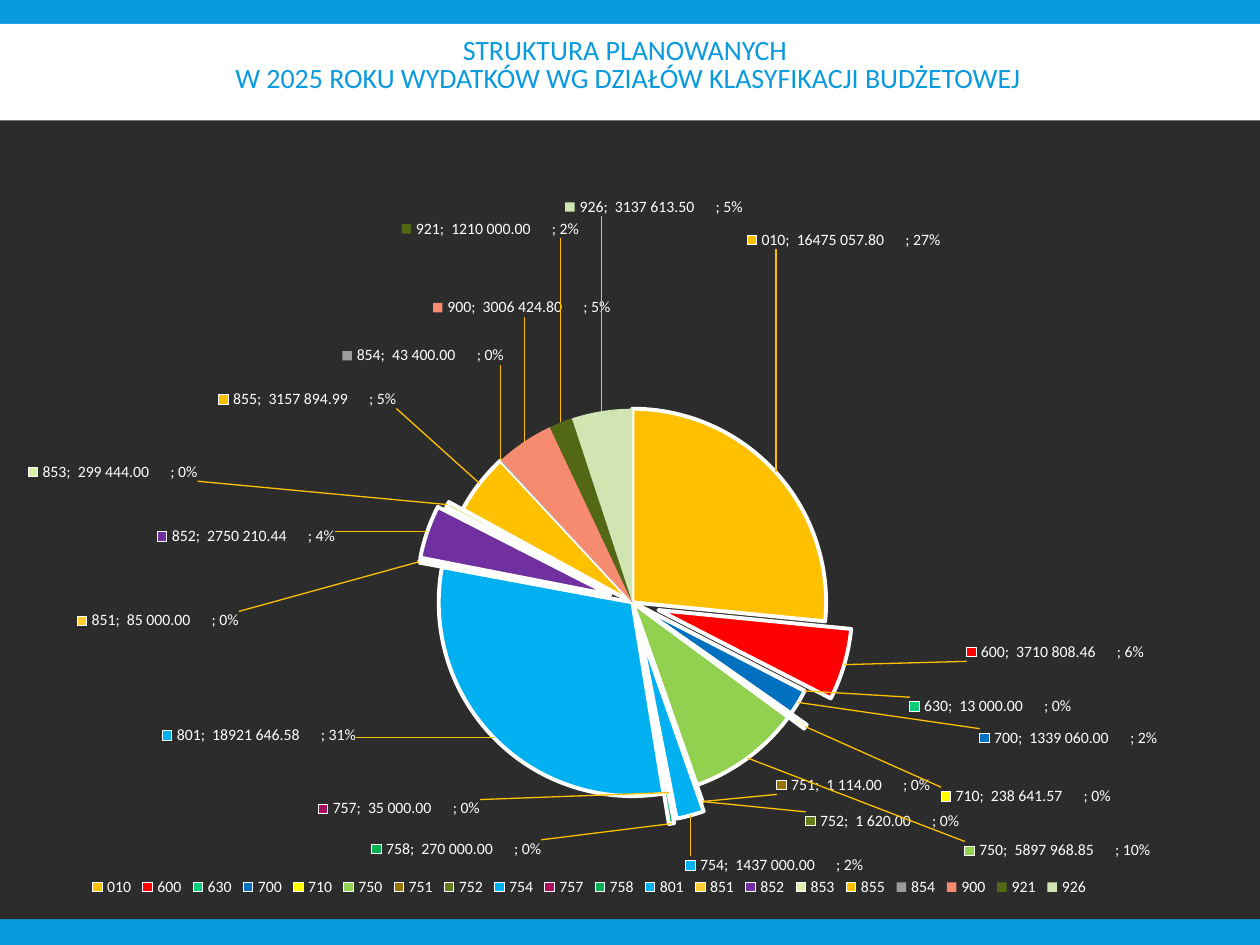
"""Build the slide on planned 2025 spending by budget division."""
from math import cos, radians, sin

from pptx import Presentation
from pptx.chart.data import CategoryChartData
from pptx.dml.color import RGBColor
from pptx.enum.chart import XL_CHART_TYPE, XL_LEGEND_POSITION
from pptx.enum.shapes import MSO_SHAPE
from pptx.enum.text import MSO_ANCHOR, PP_ALIGN
from pptx.oxml import parse_xml
from pptx.oxml.ns import nsdecls, qn
from pptx.util import Pt


def paint(fill, color):
    fill.solid()
    fill.fore_color.rgb = RGBColor.from_string(color)


def chart_xml(tag, body):
    return parse_xml(f'<c:{tag} {nsdecls("c", "a")}>{body}</c:{tag}>')


# division, amount, colour, explosion %, label left, label right, label middle
divisions = [
    ("010", 16475057.8, "FFC000", 0, 427, 537, 137),
    ("600", 3710808.46, "FF0000", 14, 552.5, 654, 373),
    ("630", 13000, "08CC78", 0, 520, 612, 404),
    ("700", 1339060, "0070C0", 0, 560, 661, 422),
    ("710", 238641.57, "FFFF00", 10, 538, 635.5, 455.5),
    ("750", 5897968.85, "92D050", 0, 551.5, 657, 486.5),
    ("751", 1114, "997300", 9, 444, 532, 449),
    ("752", 1620, "637D18", 9, 460.5, 548.5, 469.5),
    ("754", 1437000, "00B0F0", 14, 392, 493, 495),
    ("757", 35000, "AC0C5C", 0, 182, 275, 462.5),
    ("758", 270000, "00B050", 16, 212.5, 309, 485.5),
    ("801", 18921646.58, "00B0F0", 0, 92.5, 203.5, 420.5),
    ("851", 85000, "FFCD33", 12, 44, 136.5, 354.5),
    ("852", 2750210.44, "7030A0", 12, 89.5, 191.5, 306.5),
    ("853", 299444, "DCEEA7", 8, 16, 113, 269.5),
    ("855", 3157894.99, "FFC000", 0, 124.5, 226.5, 228),
    ("854", 43400, "9B9B9B", 0, 196, 288, 203),
    ("900", 3006424.8, "F68B6F", 0, 248, 349, 175.5),
    ("921", 1210000, "526814", 0, 229.5, 331, 130.5),
    ("926", 3137613.5, "D1E5B3", 0, 323.5, 424.5, 118),
]
outlined_divisions = 16
amount_format = r"_-* #\ ##0.00\ _z_ł_-;\-* #\ ##0.00\ _z_ł_-"

presentation = Presentation()
presentation.slide_width, presentation.slide_height = Pt(720), Pt(540)
slide = presentation.slides.add_slide(presentation.slide_layouts[6])
paint(slide.background.fill, "099BDD")

title_band = slide.shapes.add_shape(MSO_SHAPE.RECTANGLE, 0, Pt(13.7), Pt(720), Pt(129.6))
title_band.shadow.inherit = False
paint(title_band.fill, "FFFFFF")
title_band.line.fill.background()

title = slide.shapes.add_textbox(Pt(36.7), Pt(15.1), Pt(644.4), Pt(45.4)).text_frame
title.word_wrap = True
title.vertical_anchor = MSO_ANCHOR.MIDDLE
heading = title.paragraphs[0]
heading.text = "STRUKTURA PLANOWANYCH \vW 2025 ROKU WYDATKÓW WG DZIAŁÓW KLASYFIKACJI BUDŻETOWEJ"
heading.alignment = PP_ALIGN.CENTER
heading.line_spacing = 0.85
heading.font.size = Pt(16)
heading.font.name = "Calibri"
heading.font.color.rgb = RGBColor.from_string("099BDD")

spending = CategoryChartData(number_format=amount_format)
spending.categories = [division[0] for division in divisions]
spending.add_series("Series 1", [division[1] for division in divisions])
chart_left, chart_top, chart_width, chart_height = -5.4, 68.8, 728.6, 456.5
chart = slide.shapes.add_chart(
    XL_CHART_TYPE.PIE, Pt(chart_left), Pt(chart_top), Pt(chart_width), Pt(chart_height), spending
).chart
chart.has_title = False
chart.has_legend = True
chart.legend.position = XL_LEGEND_POSITION.BOTTOM
chart.legend.include_in_layout = False
for font, size in ((chart.font, 10), (chart.legend.font, 9)):
    font.size = Pt(size)
    font.name = "Calibri"
    font.color.rgb = RGBColor.from_string("FFFFFF")
chart.element.find(qn("c:txPr")).addprevious(chart_xml(
    "spPr", '<a:solidFill><a:srgbClr val="2C2C2C"/></a:solidFill><a:ln><a:noFill/></a:ln>'))

plot_x, plot_y, plot_w, plot_h = 0.157, 0.361, 0.693, 0.485
plot_area = chart.element.find(".//" + qn("c:plotArea"))
legend = chart.element.find(".//" + qn("c:legend"))
for part, position, target, bounds in (
    (plot_area, 0, '<c:layoutTarget val="inner"/>', (plot_x, plot_y, plot_w, plot_h)),
    (legend, 1, "", (0.075, 0.94, 0.79, 0.04)),
):
    for layout in part.findall(qn("c:layout")):
        part.remove(layout)
    edges = "".join(f'<c:{side} val="{value}"/>' for side, value in zip("xywh", bounds))
    part.insert(position, chart_xml("layout", (
        f'<c:manualLayout>{target}<c:xMode val="edge"/><c:yMode val="edge"/>'
        f'{edges}</c:manualLayout>')))

label_style = (
    '<c:spPr><a:noFill/><a:ln><a:noFill/></a:ln></c:spPr>'
    '<c:txPr><a:bodyPr wrap="none"/><a:p><a:pPr><a:defRPr sz="900">'
    '<a:solidFill><a:srgbClr val="FFFFFF"/></a:solidFill><a:latin typeface="Calibri"/>'
    '</a:defRPr></a:pPr><a:endParaRPr lang="pl-PL"/></a:p></c:txPr>'
    '<c:dLblPos val="bestFit"/><c:showLegendKey val="1"/><c:showVal val="1"/>'
    '<c:showCatName val="1"/><c:showSerName val="0"/><c:showPercent val="1"/>'
    '<c:showBubbleSize val="0"/><c:separator>; </c:separator>')

# Label offsets count from the outer edge of each slice, at its middle angle.
center_x = chart_left + (plot_x + plot_w / 2) * chart_width
center_y = chart_top + (plot_y + plot_h / 2) * chart_height
radius = plot_h * chart_height / 2
edge_gap, label_height = 4.25, 11
total = sum(division[1] for division in divisions)
running, labels = 0, ""
series = chart.plots[0].series[0]
for index, (_, amount, color, explosion, left, right, middle) in enumerate(divisions):
    slice_format = series.points[index].format
    paint(slice_format.fill, color)
    if index < outlined_divisions:
        paint(slice_format.line.fill, "FFFFFF")
        slice_format.line.width = Pt(2.25)
    else:
        slice_format.line.fill.background()
    if explosion:
        slice_shape = chart.element.findall(".//" + qn("c:dPt"))[index].find(qn("c:spPr"))
        slice_shape.addprevious(parse_xml(f'<c:explosion {nsdecls("c")} val="{explosion}"/>'))

    angle = radians(360 * (running + amount / 2) / total)
    running += amount
    reach = radius * (1 + explosion / 100) + edge_gap
    across, down = sin(angle), -cos(angle)
    near_axis = sin(radians(5))
    shift_x = 0.5 if abs(across) < near_axis else float(across < 0)
    shift_y = 0.5 if abs(down) < near_axis else float(down < 0)
    usual_left = center_x + reach * across - shift_x * (right - left)
    usual_top = center_y + reach * down - shift_y * label_height
    offset_x = (left - usual_left) / chart_width
    offset_y = (middle - label_height / 2 - usual_top) / chart_height
    labels += (
        f'<c:dLbl><c:idx val="{index}"/><c:layout><c:manualLayout><c:x val="{offset_x:.4f}"/>'
        f'<c:y val="{offset_y:.4f}"/></c:manualLayout></c:layout>{label_style}</c:dLbl>')

leader_lines = (
    '<c:showLeaderLines val="1"/><c:leaderLines><c:spPr><a:ln w="9525"><a:solidFill>'
    '<a:srgbClr val="FFC000"/></a:solidFill></a:ln></c:spPr></c:leaderLines>')
chart.element.find(".//" + qn("c:ser")).find(qn("c:cat")).addprevious(
    chart_xml("dLbls", labels + label_style + leader_lines))

presentation.save("out.pptx")
